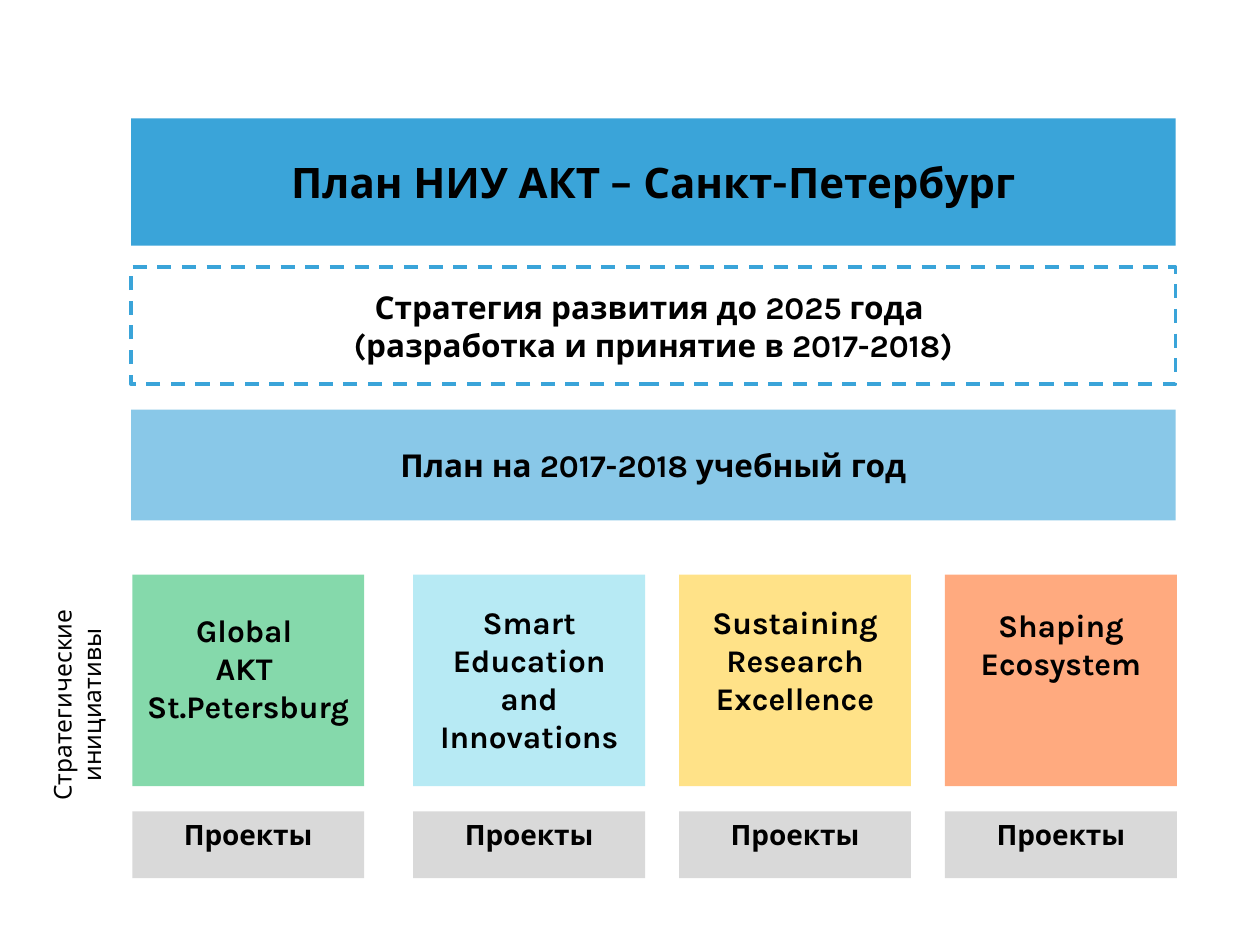
import pptx
import pptx.util
import pptx.dml.color
import pptx.enum.dml
import pptx.enum.shapes
import pptx.enum.text
import lxml.etree

Inches = pptx.util.Inches
Anchor = pptx.enum.text.MSO_ANCHOR

THEME = {
    "font": "Karla",
    "text": "000000",
    "blue": "3AA4D9",
    "light_blue": "89C8E8",
    "grey": "D9D9D9",
    "title": 24,
    "body": 18,
    "project": 16,
    "label": 14,
}

BANDS = [
    {"lines": ["План НИУ АКТ – Санкт-Петербург"], "top": 0.94, "height": 1.01,
     "size": THEME["title"], "fill": THEME["blue"], "dashed": False},
    {"lines": ["Стратегия развития до 2025 года ", "(разработка и принятие в 2017-2018)"],
     "top": 2.12, "height": 0.93, "size": THEME["body"], "fill": None, "dashed": True},
    {"lines": ["План на 2017-2018 учебный год"], "top": 3.25, "height": 0.88,
     "size": THEME["body"], "fill": THEME["light_blue"], "dashed": False},
]

INITIATIVES = [
    {"lines": ["Global ", "AKT ", "St.Petersburg"], "left": 1.05, "fill": "00B050",
     "opacity": 48, "text_top": 4.8, "text_height": 1.01, "overhang": 0.11},
    {"lines": ["Smart Education and Innovations"], "left": 3.28, "fill": "13BBDD",
     "opacity": 30, "text_top": 4.74, "text_height": 1.31, "overhang": 0},
    {"lines": ["Sustaining Research Excellence"], "left": 5.39, "fill": "FFDE75",
     "opacity": 86, "text_top": 4.74, "text_height": 1.01, "overhang": 0},
    {"lines": ["Shaping Ecosystem"], "left": 7.5, "fill": "FF9966",
     "opacity": 83, "text_top": 4.76, "text_height": 1.01, "overhang": 0},
]

PROJECT = "Проекты"
LABEL = "Стратегические инициативы"
BAND_LEFT, BAND_WIDTH = 1.04, 8.29
CARD_TOP, CARD_WIDTH, CARD_HEIGHT = 4.56, 1.84, 1.68
PROJECT_TOP, PROJECT_HEIGHT = 6.44, 0.53


def color(value):
    return pptx.dml.color.RGBColor.from_string(value)


def write(shape, lines, size, bold=True, anchor=Anchor.TOP):
    frame = shape.text_frame
    frame.word_wrap = True
    frame.vertical_anchor = anchor
    frame.text = "\n".join(lines)
    for paragraph in frame.paragraphs:
        paragraph.alignment = pptx.enum.text.PP_ALIGN.CENTER
        paragraph.font.name = THEME["font"]
        paragraph.font.size = pptx.util.Pt(size)
        paragraph.font.bold = bold
        paragraph.font.color.rgb = color(THEME["text"])


def add_rectangle(slide, left, top, width, height, fill, opacity=100):
    shape = slide.shapes.add_shape(
        pptx.enum.shapes.MSO_SHAPE.RECTANGLE,
        Inches(left), Inches(top), Inches(width), Inches(height))
    shape.shadow.inherit = False
    shape.line.fill.background()
    if fill is None:
        shape.fill.background()
        return shape
    shape.fill.solid()
    shape.fill.fore_color.rgb = color(fill)
    if opacity < 100:
        tag = pptx.oxml.ns.qn("a:srgbClr")
        fill_color = next(shape.element.spPr.iter(tag))
        alpha = lxml.etree.SubElement(fill_color, pptx.oxml.ns.qn("a:alpha"))
        alpha.set("val", str(opacity * 1000))
    return shape


def add_text(slide, left, top, width, height, lines, size, bold=True):
    shape = slide.shapes.add_textbox(
        Inches(left), Inches(top), Inches(width), Inches(height))
    write(shape, lines, size, bold)
    return shape


def add_band(slide, band):
    shape = add_rectangle(slide, BAND_LEFT, band["top"], BAND_WIDTH,
                          band["height"], band["fill"])
    if band["dashed"]:
        shape.line.color.rgb = color(THEME["blue"])
        shape.line.width = pptx.util.Pt(2)
        shape.line.dash_style = pptx.enum.dml.MSO_LINE.DASH
    write(shape, band["lines"], band["size"], anchor=Anchor.MIDDLE)


def add_initiative(slide, initiative):
    left, overhang = initiative["left"], initiative["overhang"]
    add_rectangle(slide, left, CARD_TOP, CARD_WIDTH, CARD_HEIGHT,
                  initiative["fill"], initiative["opacity"])
    add_text(slide, left - overhang, initiative["text_top"],
             CARD_WIDTH + 2 * overhang, initiative["text_height"],
             initiative["lines"], THEME["body"])
    project = add_rectangle(slide, left, PROJECT_TOP, CARD_WIDTH,
                            PROJECT_HEIGHT, THEME["grey"])
    write(project, [PROJECT], THEME["project"])


def main():
    presentation = pptx.Presentation()
    presentation.slide_width = Inches(10)
    presentation.slide_height = Inches(7.5)
    slide = presentation.slides.add_slide(presentation.slide_layouts[6])
    for band in BANDS:
        add_band(slide, band)
    for initiative in INITIATIVES:
        add_initiative(slide, initiative)
    label = add_text(slide, -0.56, 5.31, 2.34, 0.57, [LABEL], THEME["label"], bold=False)
    label.rotation = 270
    presentation.save("out.pptx")


if __name__ == "__main__":
    main()
